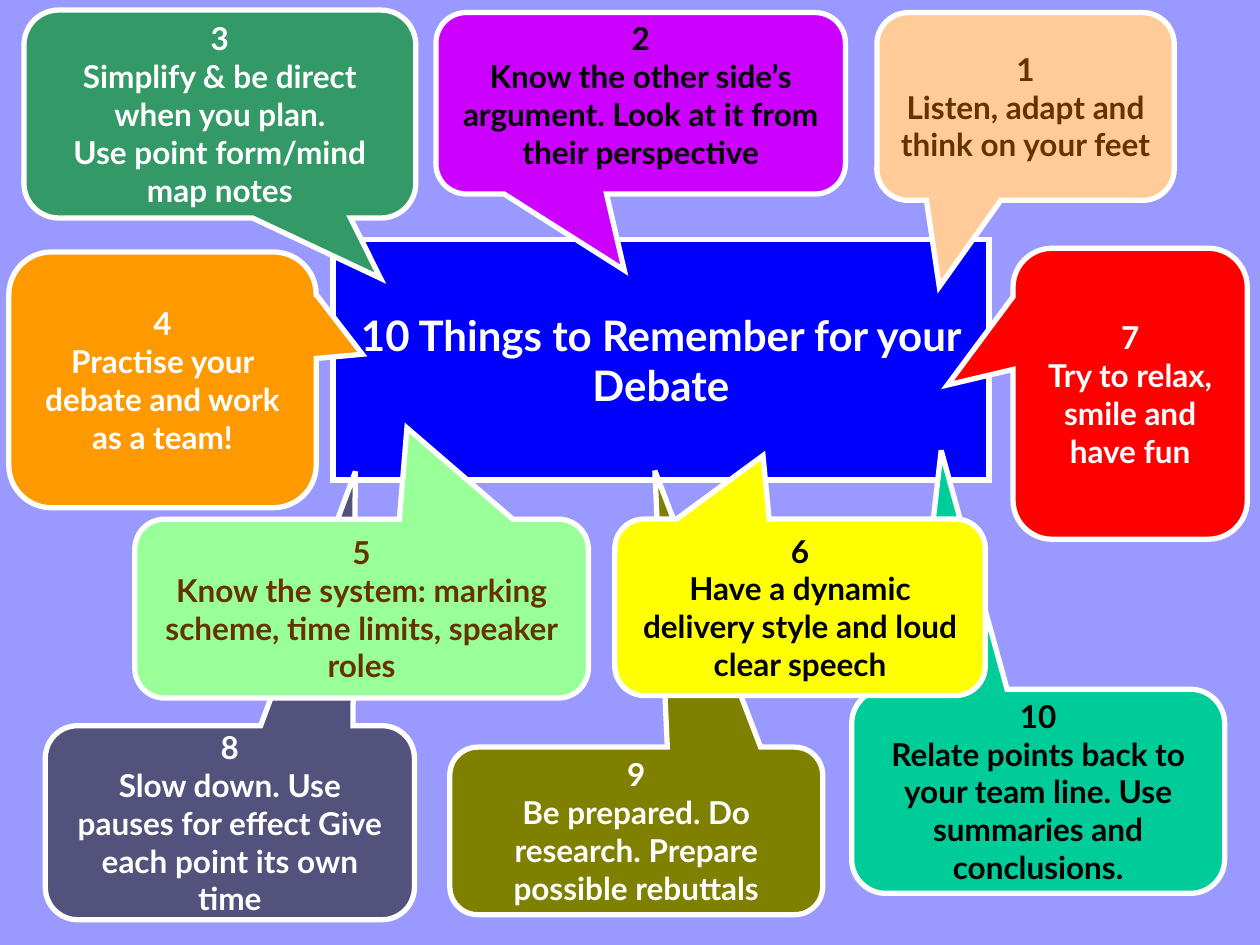
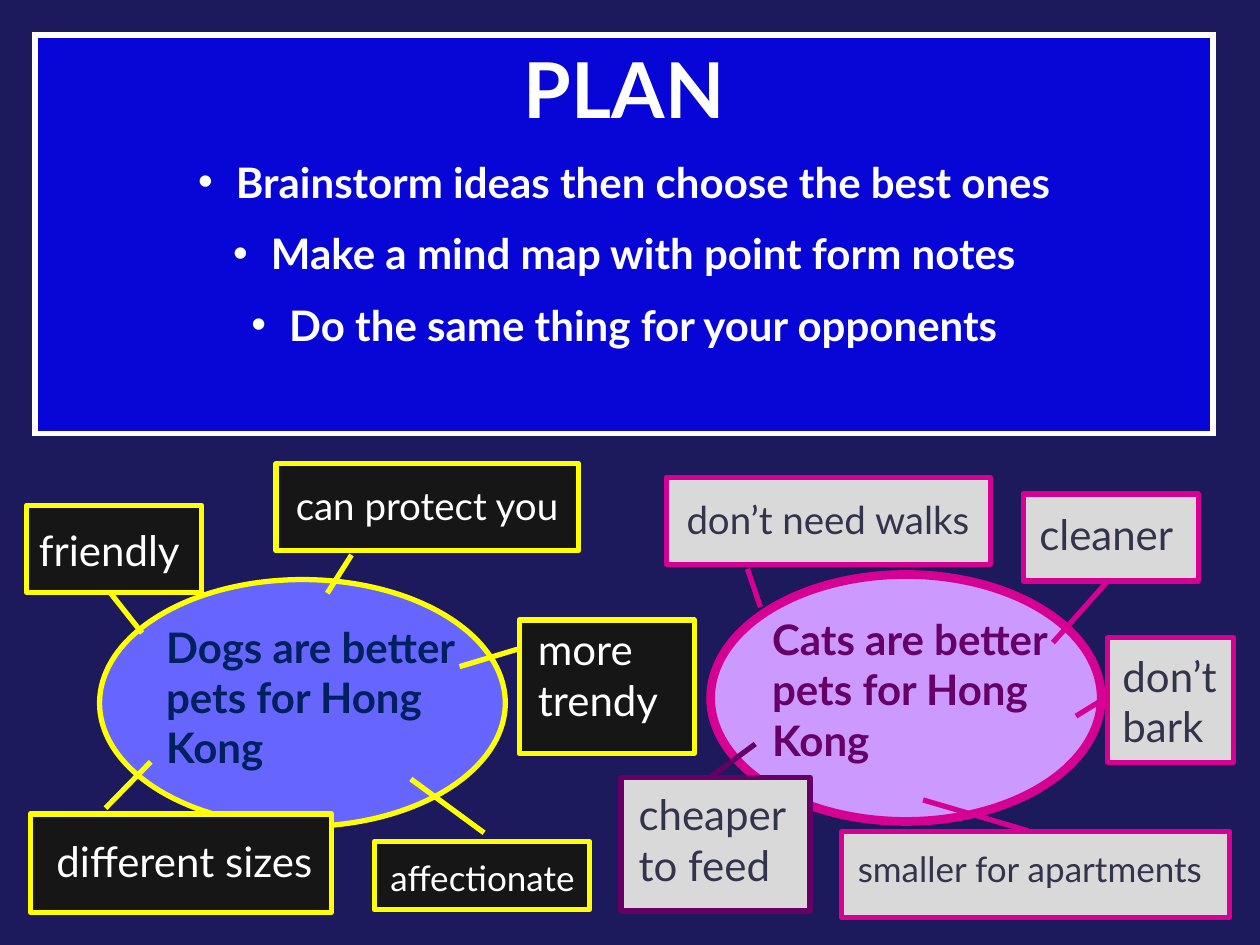
from dataclasses import dataclass
from typing import Tuple

import lxml.etree
import pptx
import pptx.dml.color
import pptx.enum.shapes
import pptx.enum.text
import pptx.oxml.ns
import pptx.shapes.autoshape
import pptx.slide
import pptx.util

Shape = pptx.shapes.autoshape.Shape
Slide = pptx.slide.Slide
Kind = pptx.enum.shapes.MSO_SHAPE
Align = pptx.enum.text.PP_ALIGN
Anchor = pptx.enum.text.MSO_ANCHOR
Area = Tuple[float, float, float, float]  # left, top, width, height in grid cells

# Shared grid, font and colours
WIDTH, HEIGHT = pptx.util.Inches(10), pptx.util.Inches(7.5)
COLS, ROWS = 100, 75
FONT = "Lato"
WHITE, BLACK, BROWN = "FFFFFF", "000000", "663300"
BLUE, YELLOW, PINK, PLUM = "0000FF", "FFFF00", "D60093", "660066"


@dataclass
class Tip:
    num: int
    area: Area
    point: Tuple[float, float]
    fill: str
    ink: str
    text: str
    lift: float = 0  # extra bottom inset in inches


@dataclass
class Note:
    text: str
    area: Area
    label: Area
    lead: Tuple[float, float, float, float]
    size: int = 24
    edge: str = ""  # replaces the edge colour of the topic


@dataclass
class Topic:
    text: str
    area: Area
    label: Area
    fill: str
    edge: str
    width: float
    ink: str
    box: str
    pen: str
    notes: Tuple[Note, ...]


# Helpers
def color(code: str) -> pptx.dml.color.RGBColor:
    return pptx.dml.color.RGBColor.from_string(code)


def cells(area: Area) -> Tuple[int, ...]:
    units = (WIDTH / COLS, HEIGHT / ROWS) * 2
    return tuple(round(part * unit) for part, unit in zip(area, units))


def place(shape: Shape, area: Area) -> Shape:
    shape.left, shape.top, shape.width, shape.height = cells(area)
    return shape


def paint(shape: Shape, fill: str, edge: str, width: float,
          sharp: bool = False, alpha: int = 100) -> None:
    shape.shadow.inherit = False
    shape.fill.solid()
    shape.fill.fore_color.rgb = color(fill)
    shape.line.color.rgb = color(edge)
    shape.line.width = pptx.util.Pt(width)
    qn = pptx.oxml.ns.qn
    if sharp:
        miter = lxml.etree.SubElement(shape.line._ln, qn("a:miter"))
        miter.set("lim", "800000")
    if alpha < 100:
        tone = shape._element.spPr.find(qn("a:solidFill"))[0]
        lxml.etree.SubElement(tone, qn("a:alpha")).set("val", str(alpha * 1000))


def write(shape: Shape, text: str, *, size: float, ink: str, bold: bool = False,
          align: Align = Align.LEFT, anchor: Anchor = Anchor.TOP,
          gap: float = 0, hang: float = 0) -> None:
    frame = shape.text_frame
    frame.word_wrap = True
    frame.auto_size = pptx.enum.text.MSO_AUTO_SIZE.NONE
    frame.vertical_anchor = anchor
    for i, line in enumerate(text.split("\n")):
        para = frame.paragraphs[0] if i == 0 else frame.add_paragraph()
        para.alignment = align
        para.space_before = pptx.util.Pt(gap if i else 0)
        if hang:
            props = para._p.get_or_add_pPr()
            props.set("marL", str(pptx.util.Inches(hang)))
            props.set("indent", str(-pptx.util.Inches(hang)))
        run = para.add_run()
        run.text = line
        run.font.name, run.font.size = FONT, pptx.util.Pt(size)
        run.font.bold, run.font.color.rgb = bold, color(ink)


def start(deck, layout: int, back: str) -> Slide:
    slide = deck.slides.add_slide(deck.slide_layouts[layout])
    slide.background.fill.solid()
    slide.background.fill.fore_color.rgb = color(back)
    return slide


def head(slide: Slide, text: str, area: Area, size: float,
         anchor: Anchor, alpha: int = 100) -> None:
    panel = place(slide.shapes.title, area)
    paint(panel, BLUE, WHITE, 3.25, sharp=True, alpha=alpha)
    write(panel, text, size=size, ink=WHITE, bold=True, align=Align.CENTER, anchor=anchor)


def label(slide: Slide, text: str, area: Area, size: float, ink: str,
          bold: bool = False) -> None:
    write(slide.shapes.add_textbox(*cells(area)), text, size=size, ink=ink, bold=bold)


def draw_tip(slide: Slide, tip: Tip) -> None:
    shape = slide.shapes.add_shape(Kind.ROUNDED_RECTANGULAR_CALLOUT, *cells(tip.area))
    shape.adjustments[0], shape.adjustments[1] = tip.point
    paint(shape, tip.fill, WHITE, 3, sharp=True)
    write(shape, f"{tip.num}\n{tip.text}", size=18, ink=tip.ink, bold=True,
          align=Align.CENTER, anchor=Anchor.MIDDLE)
    shape.text_frame.margin_bottom = pptx.util.Inches(0.05 + tip.lift)


def draw_topic(slide: Slide, topic: Topic) -> None:
    oval = slide.shapes.add_shape(Kind.OVAL, *cells(topic.area))
    paint(oval, topic.fill, topic.edge, topic.width)
    label(slide, topic.text, topic.label, 24, topic.ink, bold=True)
    for note in topic.notes:
        box = slide.shapes.add_shape(Kind.LINE_CALLOUT_1, *cells(note.area))
        for i, part in enumerate(note.lead):
            box.adjustments[i] = part
        paint(box, topic.box, note.edge or topic.edge, 3)
        label(slide, note.text, note.label, note.size, topic.pen)


# Slide 1: tips from back to front
TIPS = (
    Tip(3, (1.9, 0.8, 31.1, 16.5), (0.41, 0.79), "339966", WHITE,
        "Simplify & be direct\nwhen you plan.\nUse point form/mind map notes"),
    Tip(2, (34.6, 1, 32.5, 14.4), (-0.04, 0.92), "CC00FF", BLACK,
        "Know the other side’s argument. Look at it from their perspective", 0.13),
    Tip(1, (69.6, 1, 23.6, 14.9), (-0.29, 0.96), "FFCC99", BROWN,
        "Listen, adapt and think on your feet"),
    Tip(7, (80.4, 19.7, 18.6, 23.1), (-0.78, -0.03), "FF0000", WHITE,
        "Try to relax, smile and have fun"),
    Tip(4, (0.7, 20, 24.4, 20.3), (0.65, -0.1), "FF9900", WHITE,
        "Practise your debate and work as a team!"),
    Tip(8, (3.6, 57.6, 29.3, 15.4), (0.34, -1.81), "52527C", WHITE,
        "Slow down. Use pauses for effect Give each point its own time"),
    Tip(5, (10.7, 41.2, 36, 14.2), (0.1, -1.01), "99FF99", BROWN,
        "Know the system: marking scheme, time limits, speaker roles"),
    Tip(9, (35.7, 59.3, 29.6, 13.3), (0.05, -2.15), "808000", WHITE,
        "Be prepared. Do research. Prepare possible rebuttals"),
    Tip(10, (67.6, 54.7, 29.6, 16.2), (-0.26, -1.67), "00CC99", BLACK,
        "Relate points back to your team line. Use summaries and conclusions."),
    Tip(6, (48.8, 41.2, 29.4, 14), (-0.1, -0.86), YELLOW, BLACK,
        "Have a dynamic delivery style and loud clear speech"),
)

# Slide 2: two mind maps
DOGS = Topic(
    "Dogs are better pets for Hong Kong", (7.9, 46, 32.2, 19.6), (12.2, 48.8, 26.2, 13.1),
    "6666FF", YELLOW, 3, "002060", "161616", WHITE, (
        Note("friendly", (2.1, 40.1, 13.9, 6.9), (2.1, 41.1, 13.5, 5),
             (1.01, 0.48, 1.47, 0.66)),
        Note("more trendy", (41.2, 49.2, 13.9, 10.6), (41.7, 49, 13.5, 9.1),
             (0.22, -0.01, 0.35, -0.34)),
        Note("can protect you", (21.9, 36.8, 24, 6.9), (22.5, 37.8, 23.3, 4.7),
             (1.05, 0.25, 1.49, 0.17), 22),
        Note("different sizes", (2.4, 64.6, 23.9, 7.8), (3.5, 65.8, 24.3, 5),
             (-0.53, 0.4, -0.06, 0.25)),
        Note("affectionate", (29.7, 66.8, 17.1, 5.4), (30, 67.5, 18.3, 4.4),
             (-0.13, 0.51, -0.92, 0.17), 20),
    ))
CATS = Topic(
    "Cats are better pets for Hong Kong", (56.4, 45.6, 31, 19.6), (60.3, 48.2, 26.2, 13.1),
    "CC99FF", PINK, 5, PLUM, "D9D9D9", "33334C", (
        Note("cleaner", (81.2, 39.2, 13.9, 6.9), (81.5, 39.9, 13.5, 5),
             (1.01, 0.48, 1.71, 0.17)),
        Note("smaller for apartments", (66.8, 66, 30.8, 6.8), (67.1, 66.8, 30.7, 4.4),
             (-0.01, 0.48, -0.37, 0.21), 20),
        Note("don’t need walks", (52.9, 37.9, 25.7, 6.9), (53.5, 38.9, 25.8, 4.7),
             (1.05, 0.25, 1.49, 0.29), 22),
        Note("cheaper to feed", (49.3, 61.7, 15, 10.6), (49.7, 62.1, 14.4, 9.1),
             (-0.01, 0.48, -0.25, 0.71), edge=PLUM),
        Note("don’t\nbark", (87.9, 50.6, 10, 9.9), (88.1, 51.1, 11.9, 9.1),
             (0.48, -0.01, 0.63, -0.25)),
    ))
STEPS = """Brainstorm ideas then choose the best ones
Make a mind map with point form notes
Do the same thing for your opponents"""


def main() -> None:
    deck = pptx.Presentation()
    deck.slide_width, deck.slide_height = WIDTH, HEIGHT

    # Ten tips around the title
    slide = start(deck, 5, "9999FF")
    head(slide, "10 Things to Remember for your Debate", (26.4, 19, 52.1, 19.1),
         24, Anchor.MIDDLE)
    for tip in TIPS:
        draw_tip(slide, tip)

    # Plan with its steps, and the mind maps below
    slide = start(deck, 1, "1C195C")
    head(slide, "PLAN", (2.8, 2.8, 93.5, 31.6), 44, Anchor.TOP, alpha=75)
    body = place(slide.placeholders[1], (2.8, 11.9, 93.5, 22))
    write(body, STEPS, size=24, ink=WHITE, bold=True, align=Align.CENTER, gap=12, hang=0.3)
    for topic in (DOGS, CATS):
        draw_topic(slide, topic)

    deck.save("out.pptx")


if __name__ == "__main__":
    main()
